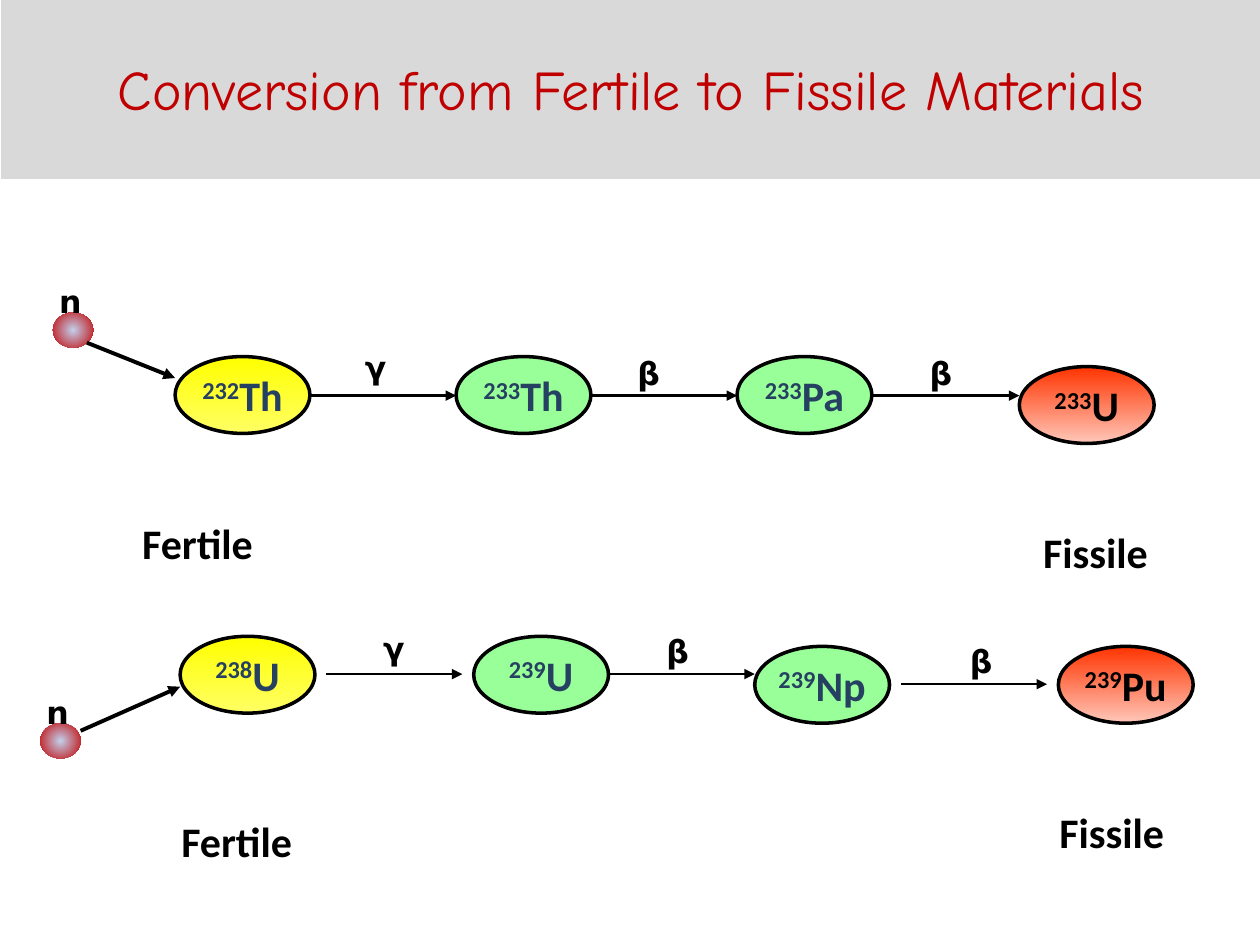
from dataclasses import dataclass

import pptx
import pptx.dml.color
import pptx.enum.dml
import pptx.enum.shapes
import pptx.enum.text
import pptx.oxml
import pptx.oxml.ns
import pptx.util
from pptx.util import Inches

RGBColor = pptx.dml.color.RGBColor
Align = pptx.enum.text.PP_ALIGN
Anchor = pptx.enum.text.MSO_ANCHOR
OVAL = pptx.enum.shapes.MSO_SHAPE.OVAL

BLACK = RGBColor(0x00, 0x00, 0x00)
NAVY = RGBColor(0x25, 0x40, 0x61)
RED = RGBColor(0xC0, 0x00, 0x00)
GREY = RGBColor(0xD9, 0xD9, 0xD9)
FERTILE = (RGBColor(0xFF, 0xFF, 0x00), RGBColor(0xFF, 0xFF, 0x64))
INTERMEDIATE = (RGBColor(0x99, 0xFF, 0x99),)
FISSILE = (RGBColor(0xFF, 0x33, 0x00), RGBColor(0xFF, 0xC7, 0xB9))
NEUTRON = (RGBColor(0xC2, 0xD1, 0xED), RED)

NUCLIDE_W, NUCLIDE_H = 1.07, 0.61
NEUTRON_W, NEUTRON_H = 0.32, 0.28
GREEK = "DejaVu Sans"


@dataclass
class Nuclide:
    mass: str
    symbol: str
    left: float
    top: float
    fill: tuple
    color: RGBColor = NAVY


@dataclass
class Decay:
    particle: str
    label_left: float
    label_top: float
    label_width: float
    start: float
    end: float
    y: float


@dataclass
class Caption:
    text: str
    left: float
    top: float
    width: float


@dataclass
class Capture:
    """A neutron at (left, top) and its arrow to the fertile nuclide."""
    left: float
    top: float
    arrow: tuple


@dataclass
class Chain:
    nuclides: list
    decays: list
    captions: list
    capture: Capture


CHAINS = [
    Chain(
        [Nuclide("232", "Th", 1.39, 2.83, FERTILE),
         Nuclide("233", "Th", 3.62, 2.83, INTERMEDIATE),
         Nuclide("233", "Pa", 5.85, 2.83, INTERMEDIATE),
         Nuclide("233", "U", 8.09, 2.91, FISSILE, BLACK)],
        [Decay("γ", 2.49, 2.71, 0.98, 2.46, 3.62, 3.14),
         Decay("β", 4.96, 2.76, 0.34, 4.69, 5.85, 3.14),
         Decay("β", 7.28, 2.76, 0.34, 6.93, 8.09, 3.14)],
        [Caption("Fertile", 1.03, 4.06, 1.09), Caption("Fissile", 8.18, 4.13, 1.04)],
        Capture(0.42, 2.48, (0.69, 2.72, 1.39, 3.0)),
    ),
    Chain(
        [Nuclide("238", "U", 1.43, 5.05, FERTILE),
         Nuclide("239", "U", 3.76, 5.05, INTERMEDIATE),
         Nuclide("239", "Np", 5.99, 5.13, INTERMEDIATE),
         Nuclide("239", "Pu", 8.4, 5.13, FISSILE, BLACK)],
        [Decay("γ", 2.68, 4.94, 0.89, 2.59, 3.67, 5.35),
         Decay("β", 5.19, 4.97, 0.34, 4.83, 5.99, 5.35),
         Decay("β", 7.6, 5.05, 0.34, 7.15, 8.31, 5.43)],
        [Caption("Fertile", 1.34, 6.42, 1.09), Caption("Fissile", 8.31, 6.35, 1.04)],
        Capture(0.32, 5.74, (0.64, 5.8, 1.43, 5.45)),
    ),
]


def write(frame, text: str, *, font: str = "Calibri", size: float = 24,
          color: RGBColor = BLACK, bold: bool = True, align=Align.LEFT,
          wrap: bool = False, superscript: str = "") -> None:
    """Fill a text frame with one line, optionally led by a superscript."""
    frame.word_wrap = wrap
    line = frame.paragraphs[0]
    line.alignment = align
    for part in filter(None, (superscript, text)):
        run = line.add_run()
        run.text = part
        run.font.name, run.font.size = font, pptx.util.Pt(size)
        run.font.bold, run.font.color.rgb = bold, color
        if part is superscript:
            run.font._element.set("baseline", "30000")


def add_label(slide, text: str, left: float, top: float, width: float,
              height: float, **text_format) -> None:
    label = slide.shapes.add_textbox(*map(Inches, (left, top, width, height)))
    write(label.text_frame, text, **text_format)
    label.text_frame.auto_size = pptx.enum.text.MSO_AUTO_SIZE.SHAPE_TO_FIT_TEXT


def add_oval(slide, left: float, top: float, width: float, height: float,
             colors: tuple, radial: bool = False):
    """Draw an ellipse with one solid colour or a two-colour gradient."""
    oval = slide.shapes.add_shape(OVAL, *map(Inches, (left, top, width, height)))
    oval.shadow.inherit = False
    if len(colors) == 1:
        oval.fill.solid()
        oval.fill.fore_color.rgb = colors[0]
        return oval
    oval.fill.gradient()
    oval.fill.gradient_angle = 270
    for stop, position, color in zip(oval.fill.gradient_stops, (0, 1), colors):
        stop.color.rgb, stop.position = color, position
    if radial:
        linear = oval._element.spPr.find(".//" + pptx.oxml.ns.qn("a:lin"))
        linear.getparent().replace(linear, pptx.oxml.parse_xml(
            f'<a:path {pptx.oxml.ns.nsdecls("a")} path="circle">'
            '<a:fillToRect l="50000" t="50000" r="50000" b="50000"/></a:path>'))
    return oval


def add_arrow(slide, x1: float, y1: float, x2: float, y2: float, weight: float) -> None:
    arrow = slide.shapes.add_connector(
        pptx.enum.shapes.MSO_CONNECTOR.STRAIGHT, *map(Inches, (x1, y1, x2, y2)))
    arrow.line.color.rgb = BLACK
    arrow.line.width = pptx.util.Pt(weight)
    namespace = pptx.oxml.ns.nsdecls("a")
    arrow.line._get_or_add_ln().append(
        pptx.oxml.parse_xml(f'<a:tailEnd {namespace} type="triangle"/>'))
    arrow._element.spPr.append(pptx.oxml.parse_xml(f"<a:effectLst {namespace}/>"))


def add_nuclide(slide, nuclide: Nuclide) -> None:
    oval = add_oval(slide, nuclide.left, nuclide.top, NUCLIDE_W, NUCLIDE_H, nuclide.fill)
    oval.line.color.rgb = BLACK
    oval.line.width = pptx.util.Pt(2)
    oval.text_frame.vertical_anchor = Anchor.MIDDLE
    write(oval.text_frame, nuclide.symbol, superscript=nuclide.mass,
          color=nuclide.color, align=Align.CENTER)


def add_chain(slide, chain: Chain) -> None:
    for nuclide in chain.nuclides:
        add_nuclide(slide, nuclide)
    for decay in chain.decays:
        centred = decay.particle == "γ"
        add_arrow(slide, decay.start, decay.y, decay.end, decay.y, 1.5)
        add_label(slide, decay.particle, decay.label_left, decay.label_top,
                  decay.label_width, 0.4, font=GREEK, size=18, wrap=centred,
                  align=Align.CENTER if centred else Align.LEFT)
    for caption in chain.captions:
        add_label(slide, caption.text, caption.left, caption.top, caption.width, 0.5)

    # Neutron capture that starts the chain
    capture = chain.capture
    neutron = add_oval(slide, capture.left, capture.top, NEUTRON_W, NEUTRON_H,
                       NEUTRON, radial=True)
    neutron.line.fill.background()
    add_arrow(slide, *capture.arrow, 2.25)
    add_label(slide, "n", capture.left - 0.05, capture.top - 0.29, 0.38, 0.4,
              font=GREEK, size=18)


def main() -> None:
    deck = pptx.Presentation()
    deck.slide_width, deck.slide_height = Inches(10), Inches(7.5)
    slide = deck.slides.add_slide(deck.slide_layouts[5])

    # Title band
    title = slide.shapes.title
    title.left, title.top, title.width, title.height = map(Inches, (0.01, -0.02, 10, 1.44))
    title.fill.solid()
    title.fill.fore_color.rgb = GREY
    title.text_frame.vertical_anchor = Anchor.MIDDLE
    write(title.text_frame, "Conversion from Fertile to Fissile Materials",
          font="Comic Neue", size=32, color=RED, bold=False, align=Align.CENTER, wrap=True)

    # Thorium and uranium chains
    for chain in CHAINS:
        add_chain(slide, chain)
    deck.save("out.pptx")


if __name__ == "__main__":
    main()
